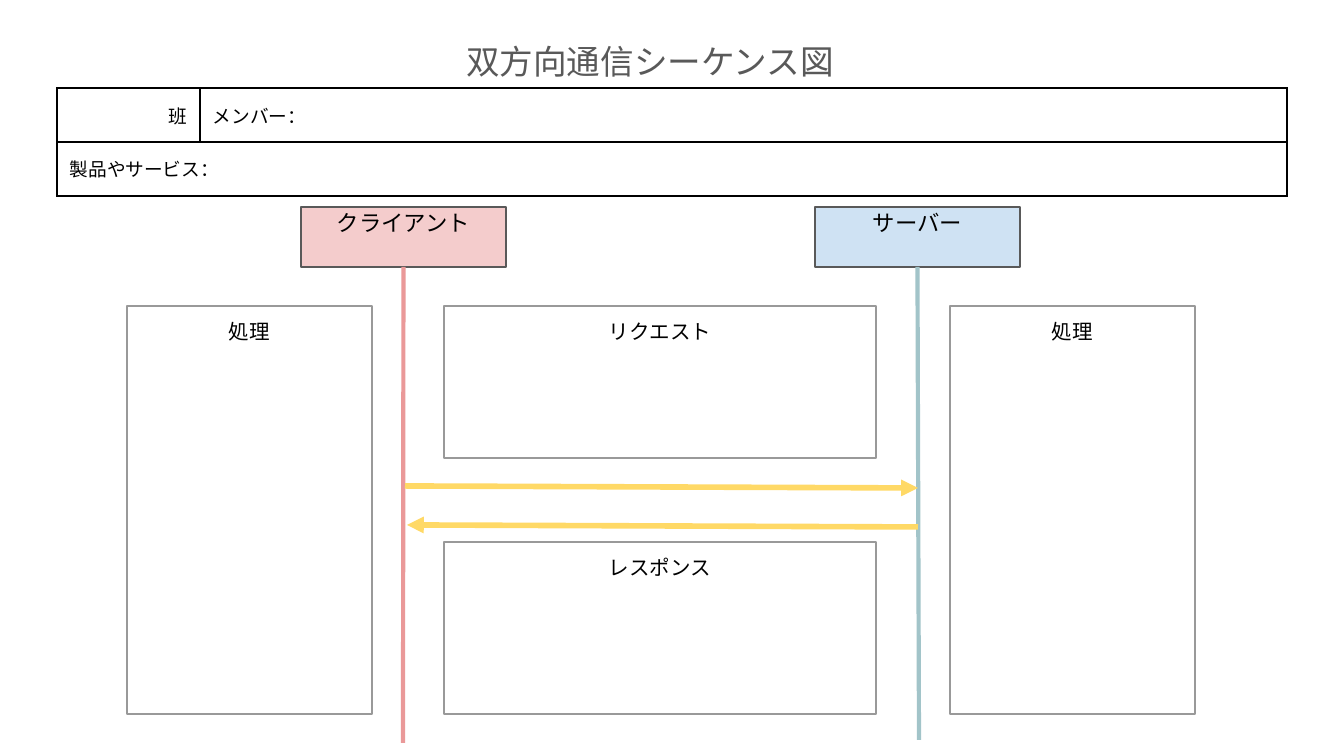
from lxml.etree import SubElement
from pptx import Presentation
from pptx.dml.color import RGBColor
from pptx.enum.shapes import MSO_CONNECTOR, MSO_SHAPE
from pptx.enum.text import MSO_ANCHOR, PP_ALIGN
from pptx.oxml import parse_xml
from pptx.oxml.ns import qn
from pptx.util import Pt

PX = 914400 / 134.4
SLIDE = (1344, 756)
INSET = 13
FONT = "Arial"
BLACK = "000000"
LEFT, CENTER, RIGHT = PP_ALIGN.LEFT, PP_ALIGN.CENTER, PP_ALIGN.RIGHT

TITLE = ("双方向通信シーケンス図", (453, 28, 457, 60))

TABLE_AT = (57, 88)
COLUMNS = [143, 172, 383, 532]
ROW_HEIGHT = 54
ROWS = [
    [("班", 1, RIGHT), ("メンバー：", 3, LEFT)],
    [("製品やサービス：", 4, LEFT)],
]

ACTOR_TOP, ACTOR_WIDTH, ACTOR_HEIGHT = 207, 205, 60
ACTORS = [
    ("クライアント", 301, "F4CCCC", "EA9999", (403, 743)),
    ("サーバー", 815, "CFE2F3", "A2C4C9", (919, 740)),
]

MESSAGES = [((405, 486), (918, 488)), ((918, 527), (407, 525))]

NOTES = [
    ("処理", (127, 306, 245, 408)),
    ("処理", (950, 306, 245, 408)),
    ("レスポンス", (444, 542, 432, 172)),
    ("リクエスト", (444, 306, 432, 152)),
]


def emu(*lengths):
    return [round(length * PX) for length in lengths]


def color(code):
    return RGBColor.from_string(code)


def write(holder, text, size, align, code=BLACK):
    para = holder.text_frame.paragraphs[0]
    para.alignment = align
    span = para.add_run()
    span.text = text
    span.font.size = Pt(size)
    span.font.name = FONT
    span.font.color.rgb = color(code)


def set_frame(holder, top=INSET):
    frame = holder.text_frame
    frame.word_wrap = True
    frame.vertical_anchor = MSO_ANCHOR.TOP
    frame.margin_left, frame.margin_right, frame.margin_bottom = emu(INSET, INSET, INSET)
    frame.margin_top = emu(top)[0]


def add_box(page, text, place, fill, line, size, top=INSET):
    box = page.shapes.add_shape(MSO_SHAPE.RECTANGLE, *emu(*place))
    box.shadow.inherit = False
    box.fill.solid()
    box.fill.fore_color.rgb = color(fill)
    box.line.color.rgb = color(line)
    box.line.width = Pt(0.75)
    set_frame(box, top)
    write(box, text, size, CENTER)
    return box


def add_line(page, start, end, code, width, arrow=False):
    line = page.shapes.add_connector(MSO_CONNECTOR.STRAIGHT, *emu(*start, *end))
    line.line.color.rgb = color(code)
    line.line.width = Pt(width)
    if arrow:
        SubElement(line.line._get_or_add_ln(), qn("a:tailEnd"), type="triangle")
    SubElement(line._element.spPr, qn("a:effectLst"))
    return line


def set_borders(cell):
    properties = cell._tc.get_or_add_tcPr()
    for index, side in enumerate(("lnL", "lnR", "lnT", "lnB")):
        properties.insert(index, parse_xml(
            f'<a:{side} xmlns:a="http://schemas.openxmlformats.org/drawingml/2006/main" '
            f'w="{Pt(0.75)}"><a:solidFill><a:srgbClr val="{BLACK}"/></a:solidFill></a:{side}>'))


def add_team_table(page):
    size = (sum(COLUMNS), ROW_HEIGHT * len(ROWS))
    table = page.shapes.add_table(len(ROWS), len(COLUMNS), *emu(*TABLE_AT, *size)).table
    table.first_row = table.horz_banding = False
    for column, width in zip(table.columns, emu(*COLUMNS)):
        column.width = width
    for row in table.rows:
        row.height = emu(ROW_HEIGHT)[0]
    for cell in table.iter_cells():
        cell.fill.background()
        set_borders(cell)
    for row, entries in enumerate(ROWS):
        column = 0
        for text, span, align in entries:
            cell = table.cell(row, column)
            if span > 1:
                cell.merge(table.cell(row, column + span - 1))
            cell.vertical_anchor = MSO_ANCHOR.MIDDLE
            cell.margin_left, cell.margin_top, cell.margin_right, cell.margin_bottom = emu(*[INSET] * 4)
            write(cell, text, 10, align)
            column += span


def main():
    """Build the two-way communication sequence worksheet."""
    deck = Presentation()
    deck.slide_width, deck.slide_height = emu(*SLIDE)
    page = deck.slides.add_slide(deck.slide_layouts[6])
    add_team_table(page)

    text, place = TITLE
    title = page.shapes.add_textbox(*emu(*place))
    set_frame(title)
    write(title, text, 18, LEFT, "595959")

    for text, left, fill, line_color, end in ACTORS:
        place = (left, ACTOR_TOP, ACTOR_WIDTH, ACTOR_HEIGHT)
        actor = add_box(page, text, place, fill, "595959", 12, top=2)
        start = (left + ACTOR_WIDTH / 2, ACTOR_TOP + ACTOR_HEIGHT)
        add_line(page, start, end, line_color, 2.25).begin_connect(actor, 2)
    for start, end in MESSAGES:
        add_line(page, start, end, "FFD966", 3, arrow=True)
    for text, place in NOTES:
        add_box(page, text, place, "FFFFFF", "999999", 11)
    deck.save("out.pptx")


if __name__ == "__main__":
    main()
